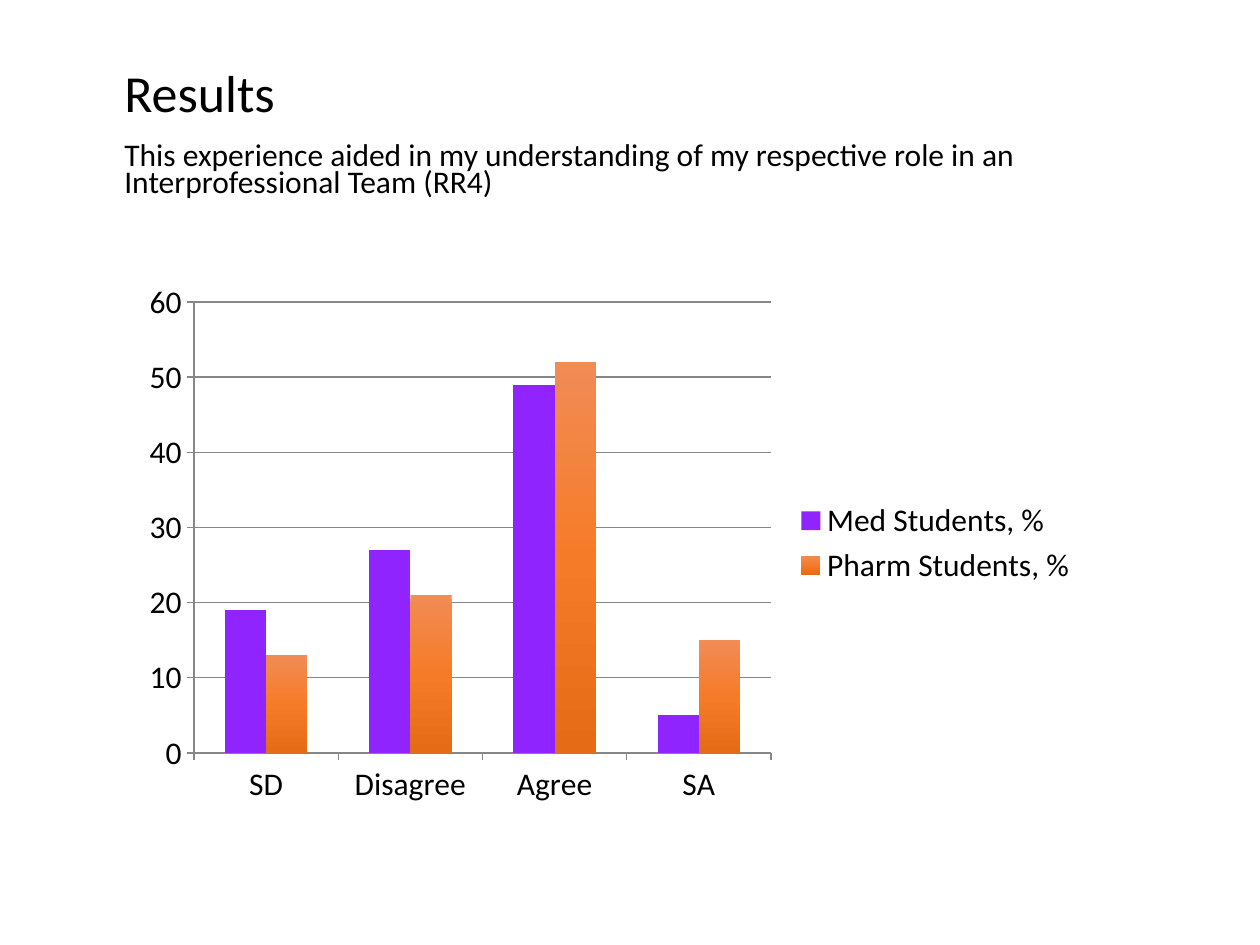
from dataclasses import dataclass

from lxml.etree import SubElement
from pptx import Presentation
from pptx.chart.data import CategoryChartData
from pptx.dml.color import RGBColor
from pptx.enum.chart import XL_CHART_TYPE, XL_LEGEND_POSITION, XL_TICK_MARK
from pptx.enum.text import MSO_ANCHOR, PP_ALIGN
from pptx.oxml import parse_xml
from pptx.oxml.ns import nsdecls, qn
from pptx.util import Emu, Pt

EMU_PER_PX = 914400 / 126
FONT = "Calibri"
BLACK = "000000"
AXIS_GRAY = "878787"


@dataclass(frozen=True)
class Box:
    left: int
    top: int
    width: int
    height: int


@dataclass(frozen=True)
class Line:
    text: str
    size: float
    space_before: float


@dataclass(frozen=True)
class Group:
    name: str
    values: tuple[int, ...]
    colors: tuple[str, ...]


HEADING_BOX = Box(112, 71, 1099, 208)
CHART_BOX = Box(131, 272, 959, 542)
PLOT_BOX = Box(194, 302, 577, 451)
HEADING = (
    Line("Results", 29.7, 0),
    Line("This experience aided in my understanding of my respective role in an "
         "Interprofessional Team (RR4)", 18, 14),
)
ANSWERS = ("SD", "Disagree", "Agree", "SA")
GROUPS = (
    Group("Med Students, %", (19, 27, 49, 5), ("8F24FF",)),
    Group("Pharm Students, %", (13, 21, 52, 15), ("F18C55", "F67B28", "E56B17")),
)


def px(length: int) -> Emu:
    return Emu(round(length * EMU_PER_PX))


def place(box: Box) -> tuple[Emu, ...]:
    return px(box.left), px(box.top), px(box.width), px(box.height)


def rgb(color: str) -> RGBColor:
    return RGBColor.from_string(color)


def style_font(font, size: float) -> None:
    font.name = FONT
    font.size = Pt(size)
    font.color.rgb = rgb(BLACK)


def add_heading(slide, box: Box, lines: tuple[Line, ...]) -> None:
    frame = slide.shapes.add_textbox(*place(box)).text_frame
    frame.word_wrap = True
    frame.vertical_anchor = MSO_ANCHOR.TOP
    for index, line in enumerate(lines):
        paragraph = frame.add_paragraph() if index else frame.paragraphs[0]
        paragraph.alignment = PP_ALIGN.LEFT
        paragraph.line_spacing = 0.7
        paragraph.space_before = Pt(line.space_before)
        run = paragraph.add_run()
        run.text = line.text
        style_font(run.font, line.size)


def fill_bars(series, colors: tuple[str, ...]) -> None:
    """One colour gives a solid fill; several run from top to bottom."""
    series.format.fill.solid()
    series.format.fill.fore_color.rgb = rgb(colors[0])
    if len(colors) > 1:
        stops = "".join(
            f'<a:gs pos="{100000 * i // (len(colors) - 1)}"><a:srgbClr val="{color}"/></a:gs>'
            for i, color in enumerate(colors))
        gradient = parse_xml(
            f'<a:gradFill {nsdecls("a")} rotWithShape="1"><a:gsLst>{stops}</a:gsLst>'
            '<a:lin ang="5400000" scaled="0"/></a:gradFill>')
        properties = series.format.fill._xPr
        properties.replace(properties.find(qn("a:solidFill")), gradient)


def fix_plot_area(chart, outer: Box, inner: Box) -> None:
    """Set the inner plot area as fractions of the chart's frame."""
    plot_area = chart._chartSpace.chart.plotArea
    layout = plot_area.find(qn("c:layout"))
    if layout is None:
        layout = parse_xml(f'<c:layout {nsdecls("c")}/>')
        plot_area.insert(0, layout)
    manual = SubElement(layout, qn("c:manualLayout"))
    settings = {
        "layoutTarget": "inner", "xMode": "edge", "yMode": "edge",
        "x": (inner.left - outer.left) / outer.width,
        "y": (inner.top - outer.top) / outer.height,
        "w": inner.width / outer.width,
        "h": inner.height / outer.height,
    }
    for tag, value in settings.items():
        SubElement(manual, qn(f"c:{tag}")).set("val", str(value))


def style_line(line) -> None:
    line.color.rgb = rgb(AXIS_GRAY)
    line.width = Pt(0.75)


def add_results_chart(slide, box: Box, plot_box: Box) -> None:
    data = CategoryChartData()
    data.categories = ANSWERS
    for group in GROUPS:
        data.add_series(group.name, group.values)
    chart = slide.shapes.add_chart(
        XL_CHART_TYPE.COLUMN_CLUSTERED, *place(box), data).chart
    style_font(chart.font, 18)
    chart.has_title = False
    chart.has_legend = True
    chart.legend.position = XL_LEGEND_POSITION.RIGHT
    chart.legend.include_in_layout = False

    bars = chart.plots[0]
    bars.vary_by_categories = False
    bars.gap_width = 150
    bars.overlap = 0
    for series, group in zip(bars.series, GROUPS):
        series.invert_if_negative = False
        fill_bars(series, group.colors)

    for axis in (chart.category_axis, chart.value_axis):
        axis.major_tick_mark = XL_TICK_MARK.OUTSIDE
        axis.minor_tick_mark = XL_TICK_MARK.NONE
        style_line(axis.format.line)
    percent_axis = chart.value_axis
    percent_axis.minimum_scale = 0
    percent_axis.maximum_scale = 60
    percent_axis.major_unit = 10
    percent_axis.has_major_gridlines = True
    style_line(percent_axis.major_gridlines.format.line)
    fix_plot_area(chart, box, plot_box)


def main() -> None:
    deck = Presentation()
    deck.slide_width, deck.slide_height = px(1260), px(945)
    slide = deck.slides.add_slide(deck.slide_layouts[6])
    add_heading(slide, HEADING_BOX, HEADING)
    add_results_chart(slide, CHART_BOX, PLOT_BOX)
    deck.save("out.pptx")


if __name__ == "__main__":
    main()
